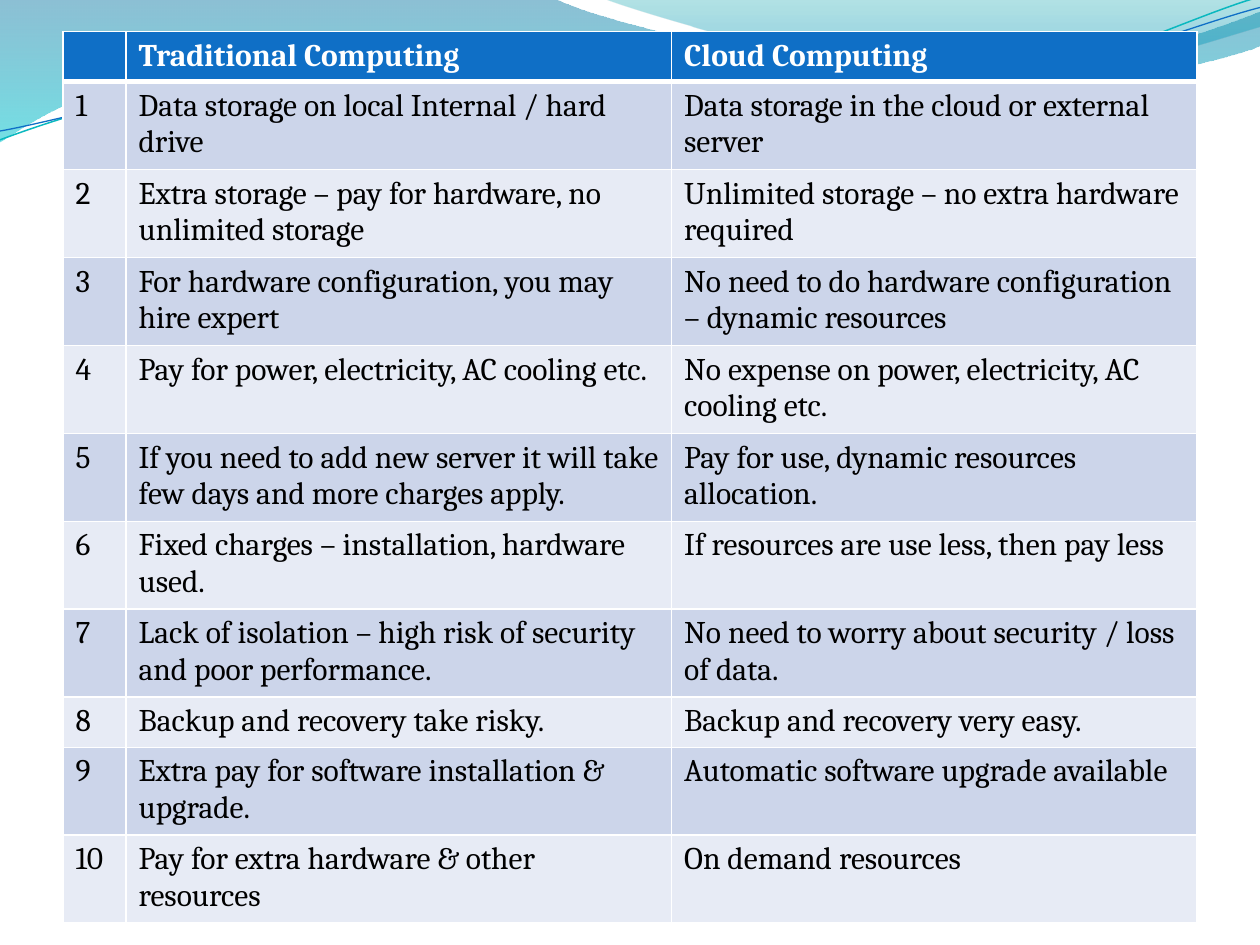
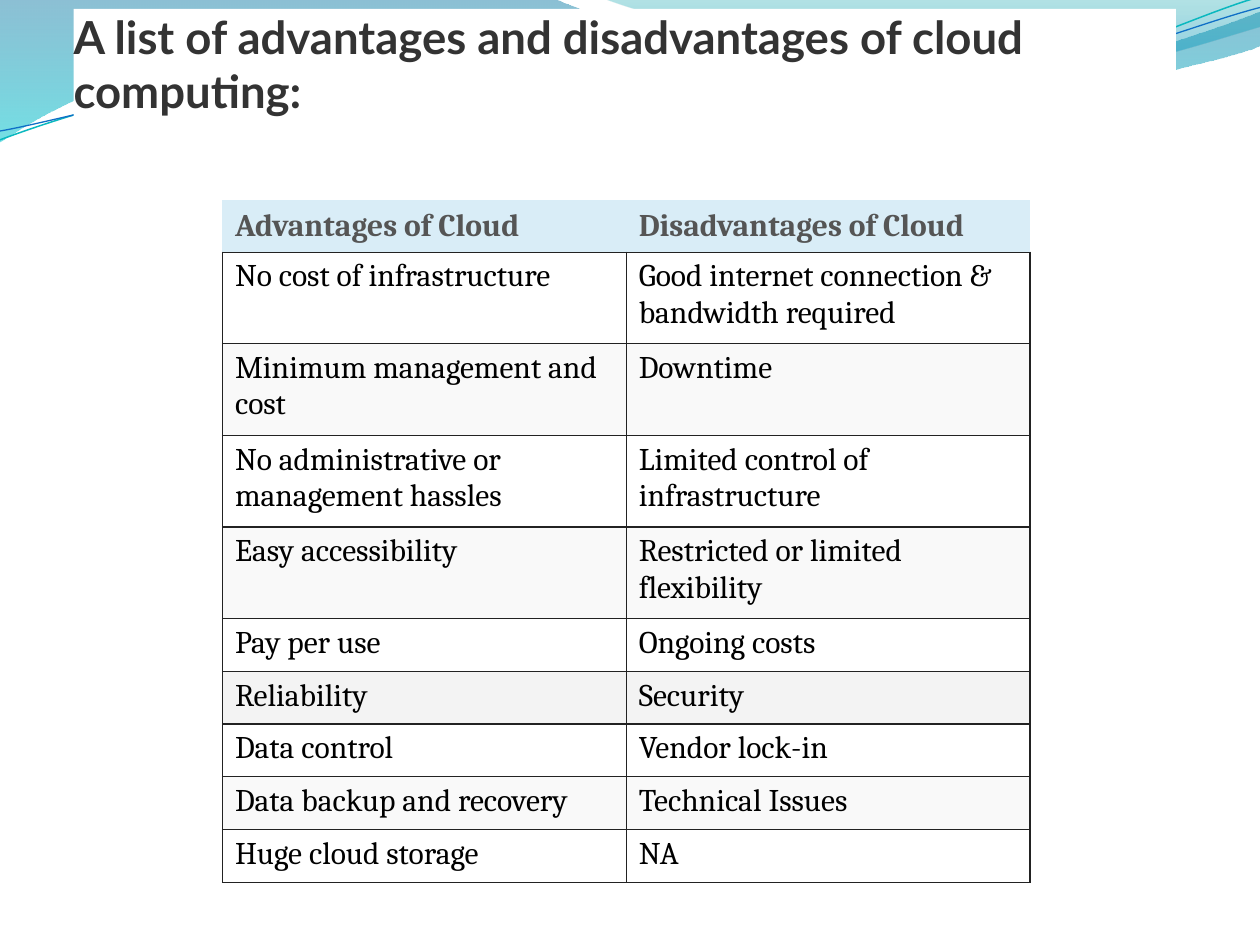
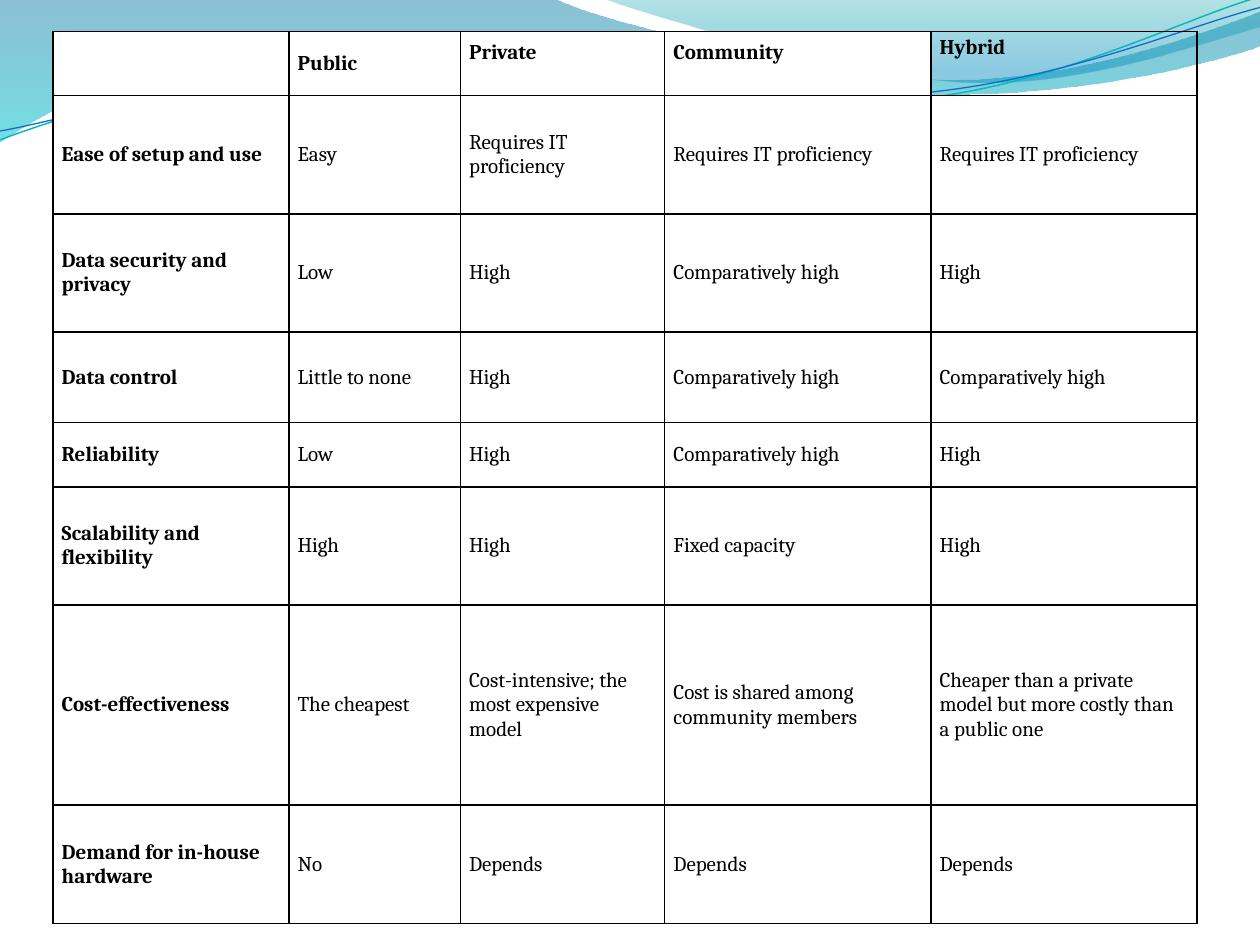
import math

import pptx
import pptx.util
from pptx.dml.color import RGBColor
from pptx.enum.text import MSO_ANCHOR, MSO_AUTO_SIZE, PP_ALIGN
from pptx.oxml.ns import qn
from lxml import etree

Inches, Pt = pptx.util.Inches, pptx.util.Pt

# Shared look
BODY_FONT, TITLE_FONT = "Cambria", "Lato"
WHITE, BLACK = RGBColor(255, 255, 255), RGBColor(0, 0, 0)
BLUE, TEAL = RGBColor(0x0F, 0x6F, 0xC6), RGBColor(0x0A, 0xB8, 0xBF)
BAND_DARK, BAND_LIGHT = RGBColor(0xCC, 0xD5, 0xEA), RGBColor(0xE7, 0xEB, 0xF5)
PALE_BLUE, HEAD_GREY = RGBColor(0xD9, 0xED, 0xF7), RGBColor(0x55, 0x55, 0x55)
TITLE_GREY, RULE_GREY = RGBColor(0x33, 0x33, 0x33), RGBColor(0x22, 0x22, 0x22)
GREY_LIGHT, GREY_MID = RGBColor(0xF9, 0xF9, 0xF9), RGBColor(0xF3, 0xF3, 0xF3)

# Header waves, in inches: pairs are line ends, sextets are Bezier curves
# Gradient stops: position, colour, opacity in percent
WAVE_BANDS = [
    ([(0, 0), (4.4, -0.01), (4.76, 0.17, 6.64, 0.63, 7.58, 0.63),
      (8.53, 0.63, 9.58, 0.26, 10, 0.09), (10.01, 0.36),
      (9.83, 0.44, 8.7, 0.76, 7.46, 0.75), (6.22, 0.75, 3.82, 0.28, 2.57, 0.34),
      (1.29, 0.36, 0.46, 0.83, -0.01, 1.13)],
     [(0, RGBColor(0, 0x74, 0xA1), 45), (1, RGBColor(0, 0xC6, 0xCF), 55)]),
    ([(4.79, -0.01), (5.09, 0.11, 6.82, 0.62, 7.69, 0.65),
      (8.56, 0.69, 9.61, 0.32, 10, 0.21), (10, 0)],
     [(0, RGBColor(0, 0xA1, 0xA9), 30), (0.8, RGBColor(0, 0x8B, 0xBF), 45)]),
]
# Outline, centre of rotation, colour, width in points
WAVE_LINES = [
    ([(0, 1.11), (0.48, 0.93, 1.58, 0.57, 2.77, 0.52),
      (3.95, 0.47, 5.93, 0.89, 7.13, 0.8), (8.33, 0.71, 9.38, 0.15, 9.98, -0.02)],
     (4.99, 0.58), TEAL, 0.85),
    ([(0, 1.04), (0.47, 0.96, 1.64, 0.61, 2.83, 0.56),
      (4.03, 0.51, 5.97, 0.84, 7.17, 0.75), (8.36, 0.67, 9.41, 0.21, 10, 0.06)],
     (5, 0.59), BLUE, 0.75),
]
WAVE_TILT = 2.7  # degrees, anticlockwise

# Content
COMPUTING_HEAD = ("", "Traditional Computing", "Cloud Computing")
COMPUTING = [
    ("Data storage on local Internal / hard drive",
     "Data storage in the cloud or external server"),
    ("Extra storage – pay for hardware, no unlimited storage",
     "Unlimited storage – no extra hardware required"),
    ("For hardware configuration, you may hire expert",
     "No need to do hardware configuration – dynamic resources"),
    ("Pay for power, electricity, AC cooling etc.",
     "No expense on power, electricity, AC cooling etc."),
    ("If you need to add new server it will take few days and more charges apply.",
     "Pay for use, dynamic resources allocation."),
    ("Fixed charges – installation, hardware used.",
     "If resources are use less, then pay less"),
    ("Lack of isolation – high risk of security and poor performance.",
     "No need to worry about security / loss of data."),
    ("Backup and recovery take risky.", "Backup and recovery very easy."),
    ("Extra pay for software installation & upgrade.",
     "Automatic software upgrade available"),
    ("Pay for extra hardware & other resources", "On demand resources"),
]
PROS_TITLE = "A list of advantages and disadvantages of cloud computing:"
PROS_AND_CONS = [
    ("Advantages of Cloud", "Disadvantages of Cloud"),
    ("No cost of infrastructure", "Good internet connection & bandwidth required"),
    ("Minimum management and cost", "Downtime"),
    ("No administrative or management hassles", "Limited control of infrastructure"),
    ("Easy accessibility", "Restricted or limited flexibility"),
    ("Pay per use", "Ongoing costs"),
    ("Reliability", "Security"),
    ("Data control", "Vendor lock-in"),
    ("Data backup and recovery", "Technical Issues"),
    ("Huge cloud storage", "NA"),
]
MODELS = [
    ("", "Public", "Private", "Community", "Hybrid"),
    ("Ease of setup and use", "Easy") + ("Requires IT proficiency",) * 3,
    ("Data security and privacy", "Low", "High", "Comparatively high", "High"),
    ("Data control", "Little to none", "High", "Comparatively high",
     "Comparatively high"),
    ("Reliability", "Low", "High", "Comparatively high", "High"),
    ("Scalability and flexibility", "High", "High", "Fixed capacity", "High"),
    ("Cost-effectiveness", "The cheapest", "Cost-intensive; the most expensive model",
     "Cost is shared among community members",
     "Cheaper than a private model but more costly than a public one"),
    ("Demand for in-house hardware", "No") + ("Depends",) * 3,
]


# Waves
def turn(outline, centre, degrees):
    """Turn every point of an outline clockwise about a centre."""
    cx, cy = centre
    cos, sin = math.cos(math.radians(degrees)), math.sin(math.radians(degrees))
    turned = []
    for part in outline:
        points = zip(part[::2], part[1::2])
        turned.append(tuple(
            value for x, y in points
            for value in (cx + (x - cx) * cos - (y - cy) * sin,
                          cy + (x - cx) * sin + (y - cy) * cos)))
    return turned


def add_wave(slide, outline, close):
    points = [(Inches(x), Inches(y))
              for part in outline for x, y in zip(part[::2], part[1::2])]
    builder = slide.shapes.build_freeform(*points[0], scale=1.0)
    builder.add_line_segments(points[1:], close=close)
    wave = builder.convert_to_shape()
    wave.shadow.inherit = False
    # Fold each run of three points that belongs to a curve into one Bezier
    segments = iter(list(wave.element.iter(qn("a:lnTo"))))
    for part in outline[1:]:
        segment = next(segments)
        if len(part) == 6:
            segment.tag = qn("a:cubicBezTo")
            for _ in range(2):
                extra = next(segments)
                segment.append(extra[0])
                extra.getparent().remove(extra)
    return wave


def add_header_waves(slide):
    """Draw the waves, then hand them to the master so all slides share them."""
    waves = []
    for outline, stops in WAVE_BANDS:
        band = add_wave(slide, outline, True)
        band.line.fill.background()
        band.fill.gradient()
        band.fill.gradient_angle = 270
        for stop, (position, colour, _) in zip(band.fill.gradient_stops, stops):
            stop.position = position
            stop.color.rgb = colour
        for clr, (_, _, opacity) in zip(band.element.iter(qn("a:srgbClr")), stops):
            etree.SubElement(clr, qn("a:alpha")).set("val", str(opacity * 1000))
        waves.append(band)
    for outline, centre, colour, width in WAVE_LINES:
        line = add_wave(slide, turn(outline, centre, WAVE_TILT), False)
        line.rotation = 360 - WAVE_TILT
        line.fill.background()
        line.line.color.rgb = colour
        line.line.width = Pt(width)
        waves.append(line)
    master = slide.slide_layout.slide_master
    for number, wave in enumerate(waves, 101):
        next(wave.element.iter(qn("p:cNvPr"))).set("id", str(number))
        master.shapes.element.append(wave.element)


# Tables
def set_borders(cell, colour, widths):
    """Widths in points for left, right, top, bottom; 0 means no line."""
    properties = cell._tc.get_or_add_tcPr()
    for side, width in zip("LRTB", widths):
        edge = etree.SubElement(properties, qn("a:ln" + side))
        edge.set("w", str(Pt(width)))
        if width:
            fill = etree.SubElement(edge, qn("a:solidFill"))
            etree.SubElement(fill, qn("a:srgbClr")).set("val", str(colour))
        else:
            etree.SubElement(edge, qn("a:noFill"))


def share(total, parts):
    return [Inches(total * part / sum(parts)) for part in parts]


def add_grid(slide, rows, box, columns, heights, size, rule, look):
    """Columns and heights share out the box.

    look(row, column) gives fill, font colour, bold, anchor and border widths.
    """
    left, top, width, height = box
    table = slide.shapes.add_table(
        len(rows), len(columns), *(Inches(length) for length in box)).table
    table.first_row = table.horz_banding = False
    for column, column_width in zip(table.columns, share(width, columns)):
        column.width = column_width
    for r, (texts, row_height) in enumerate(zip(rows, share(height, heights))):
        table.rows[r].height = row_height
        for c, text in enumerate(texts):
            cell = table.cell(r, c)
            fill, colour, bold, anchor, borders = look(r, c)
            set_borders(cell, rule, borders)
            if fill is None:
                cell.fill.background()
            else:
                cell.fill.solid()
                cell.fill.fore_color.rgb = fill
            cell.vertical_anchor = anchor
            cell.text = text
            font = cell.text_frame.paragraphs[0].font
            font.name, font.size, font.bold = BODY_FONT, Pt(size), bold
            font.color.rgb = colour
    return table


def computing_look(r, c):
    if r == 0:
        return BLUE, WHITE, True, MSO_ANCHOR.TOP, (1, 1, 1, 3)
    band = BAND_DARK if r % 2 else BAND_LIGHT
    return band, BLACK, False, MSO_ANCHOR.TOP, (1, 1, 3 if r == 1 else 1, 1)


def pros_look(r, c):
    if r == 0:
        return PALE_BLUE, HEAD_GREY, True, MSO_ANCHOR.MIDDLE, (0, 0, 0, 0.75)
    band = WHITE if r % 2 else GREY_MID if r == 6 else GREY_LIGHT
    return band, BLACK, False, MSO_ANCHOR.TOP, (0.75,) * 4


def models_look(r, c):
    raised = r == 0 and c >= 2
    fill = None if (r, c) == (0, 4) else WHITE
    anchor = MSO_ANCHOR.TOP if raised else MSO_ANCHOR.MIDDLE
    return fill, BLACK, r == 0 or c == 0, anchor, (1,) * 4


# Slides
def add_computing_slide(prs):
    slide = prs.slides.add_slide(prs.slide_layouts[6])
    add_header_waves(slide)
    rows = [COMPUTING_HEAD] + [(str(n), *pair) for n, pair in enumerate(COMPUTING, 1)]
    heights = [0.4 if r in (0, 8) else 0.7 for r in range(len(rows))]
    add_grid(slide, rows, (0.5, 0.25, 9, 7.08), (0.5, 4.33, 4.17), heights, 18,
             WHITE, computing_look)


def add_pros_slide(prs):
    slide = prs.slides.add_slide(prs.slide_layouts[5])
    heights = [0.73 if 1 <= r <= 4 else 0.42 for r in range(len(PROS_AND_CONS))]
    add_grid(slide, PROS_AND_CONS, (127.1 / 72, 114 / 72, 6.41, 5.42), (1, 1),
             heights, 18, RULE_GREY, pros_look)

    title = slide.shapes.title
    title.left, title.top = Pt(42), Inches(0.07)
    title.width, title.height = Inches(8.75), Inches(1.18)
    title.fill.solid()
    title.fill.fore_color.rgb = WHITE
    frame = title.text_frame
    frame.text = PROS_TITLE
    frame.word_wrap, frame.auto_size = True, MSO_AUTO_SIZE.NONE
    frame.vertical_anchor = MSO_ANCHOR.TOP
    frame.margin_left = frame.margin_right = frame.margin_top = frame.margin_bottom = 0
    heading = frame.paragraphs[0]
    heading.alignment = PP_ALIGN.LEFT
    heading.font.name, heading.font.size, heading.font.bold = TITLE_FONT, Pt(26), True
    heading.font.color.rgb = TITLE_GREY


def add_models_slide(prs):
    slide = prs.slides.add_slide(prs.slide_layouts[6])
    table = add_grid(slide, MODELS, (0.42, 0.25, 9.08, 7.08),
                     (1.87, 1.36, 1.62, 2.11, 2.11),
                     (0.51, 0.94, 0.94, 0.72, 0.51, 0.94, 1.59, 0.94), 12, BLACK,
                     models_look)
    for cell in table.iter_cells():
        cell.margin_left = cell.margin_right = Inches(0.07)
        cell.margin_top = cell.margin_bottom = Inches(0.04)
    # Three headings sit above the middle of their row
    for column, inset in ((2, 0.07), (3, 0.07), (4, 0.03)):
        table.cell(0, column).margin_top = Inches(inset)


def main():
    prs = pptx.Presentation()
    prs.slide_width, prs.slide_height = Inches(10), Inches(7.5)
    add_computing_slide(prs)
    add_pros_slide(prs)
    add_models_slide(prs)
    prs.save("out.pptx")


if __name__ == "__main__":
    main()
